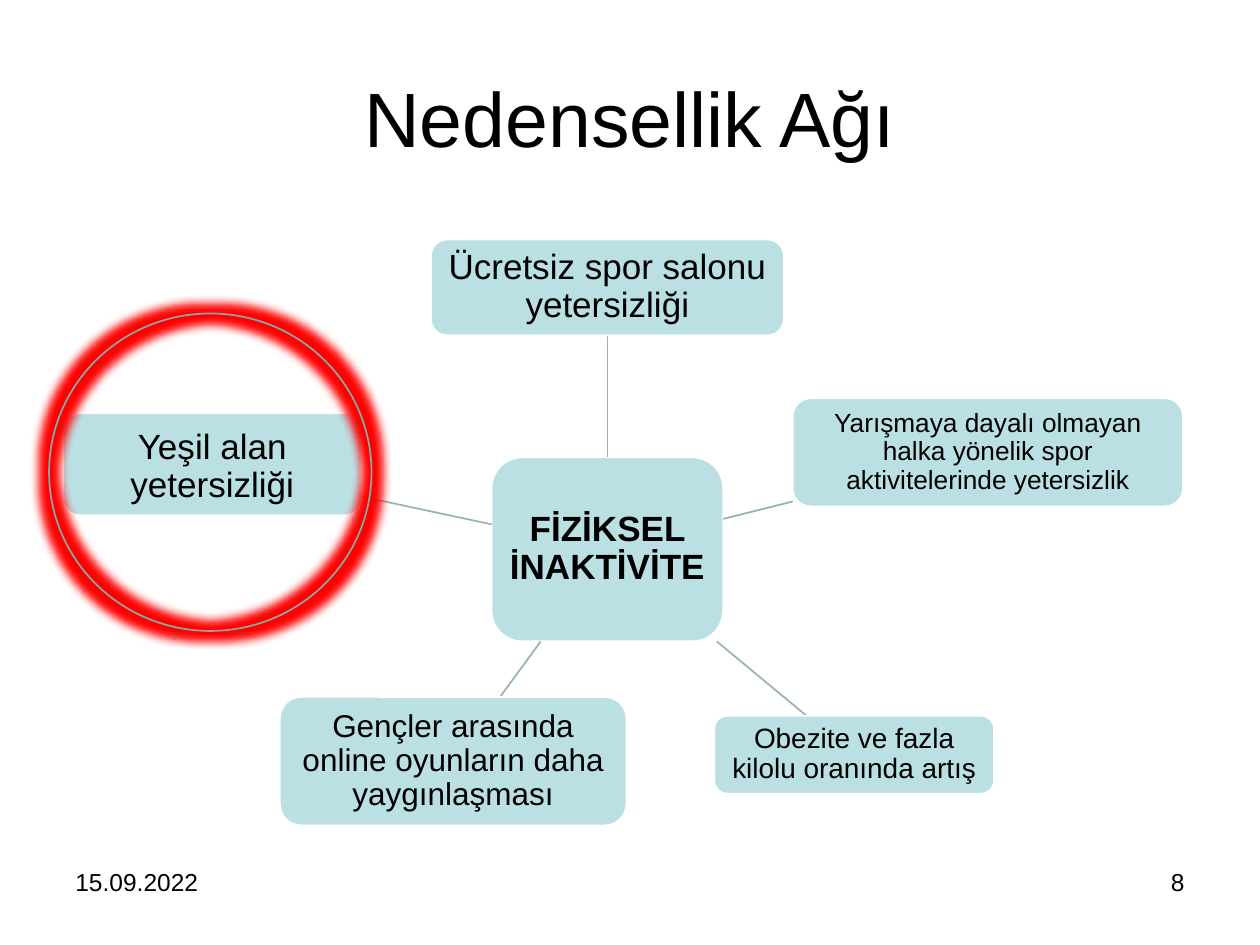
from collections import namedtuple

from lxml.etree import SubElement
from pptx import Presentation
from pptx.dml.color import RGBColor
from pptx.enum.shapes import MSO_CONNECTOR, MSO_SHAPE
from pptx.enum.text import MSO_ANCHOR, PP_ALIGN
from pptx.oxml.ns import qn
from pptx.util import Cm, Pt

BLACK = RGBColor(0x00, 0x00, 0x00)
WHITE = RGBColor(0xFF, 0xFF, 0xFF)
RED = RGBColor(0xFF, 0x00, 0x00)
NODE_FILL = RGBColor(0xBB, 0xE0, 0xE3)
SPOKE_LINE = RGBColor(0x96, 0xB3, 0xB6)
RING_LINE = RGBColor(0x8A, 0xA6, 0xA8)

# All lengths in centimetres
Box = namedtuple("Box", "left top width height")
Node = namedtuple("Node", "text box size inset spoke")

HUB = Box(9.91, 9.22, 4.67, 3.71)

# Causes around the hub; a spoke is (start, end) measured from the hub's corner,
# None where it joins the middles of two sides
CAUSES = [
    Node("Ücretsiz spor salonu yetersizliği", Box(8.69, 4.83, 7.11, 1.93), 20, 0.15, None),
    Node("Yarışmaya dayalı olmayan halka yönelik spor aktivitelerinde yetersizlik",
         Box(15.98, 8.03, 7.87, 2.18), 15, 0.1, ((4.67, 1.24), (6.07, 0.89))),
    Node("Obezite ve fazla kilolu oranında artış",
         Box(14.4, 14.43, 5.64, 1.57), 16, 0.1, ((4.54, 3.71), (6.35, 5.21))),
    Node("Gençler arasında online oyunların daha yaygınlaşması",
         Box(5.64, 14.05, 6.99, 2.59), 18, 0.13, ((0.99, 3.71), (0.17, 4.83))),
    Node("Yeşil alan yetersizliği", Box(1.27, 8.33, 6.02, 2.06), 20, 0.15,
         ((0, 1.35), (-2.62, 0.79))),
]


def write(shape, text, size, bold=False, align=PP_ALIGN.LEFT, anchor=MSO_ANCHOR.TOP,
          inset=None, line_spacing=None):
    frame = shape.text_frame
    frame.word_wrap = True
    frame.vertical_anchor = anchor
    if inset is not None:
        frame.margin_left = frame.margin_right = Cm(inset)
        frame.margin_top = frame.margin_bottom = Cm(inset)
    para = frame.paragraphs[0]
    para.alignment = align
    if line_spacing:
        para.line_spacing = line_spacing
    span = para.add_run()
    span.text = text
    span.font.name = "Arial"
    span.font.size = Pt(size)
    span.font.bold = bold
    span.font.color.rgb = BLACK


def add_label(page, box, text, size, **style):
    write(page.shapes.add_textbox(*map(Cm, box)), text, size, **style)


def add_node(page, box, text, size, inset, bold=False):
    node = page.shapes.add_shape(MSO_SHAPE.ROUNDED_RECTANGLE, *map(Cm, box))
    node.shadow.inherit = False
    node.fill.solid()
    node.fill.fore_color.rgb = NODE_FILL
    node.line.color.rgb = WHITE
    node.line.width = Pt(1)
    write(node, text, size, bold=bold, align=PP_ALIGN.CENTER,
          anchor=MSO_ANCHOR.MIDDLE, inset=inset, line_spacing=0.9)
    return node


def add_spoke(page, start, end):
    spoke = page.shapes.add_connector(MSO_CONNECTOR.STRAIGHT, *map(Cm, start + end))
    spoke.line.color.rgb = SPOKE_LINE
    spoke.line.width = Pt(1)
    SubElement(spoke._element.spPr, qn("a:effectLst"))
    return spoke


def add_causal_web(page, hub_box, causes):
    hub = add_node(page, hub_box, "FİZİKSEL İNAKTİVİTE", 20, 0.15, bold=True)
    for cause in causes:
        ends = cause.spoke or ((0, 0), (0, 0))
        start, end = [(hub_box.left + x, hub_box.top + y) for x, y in ends]
        spoke = add_spoke(page, start, end)
        node = add_node(page, cause.box, cause.text, cause.size, cause.inset)
        if cause.spoke is None:
            spoke.begin_connect(hub, 0)
            spoke.end_connect(node, 2)
    # The last cause sits slightly low in its box
    node.text_frame.margin_top = Cm(0.25)


def add_glowing_ring(page, box):
    ring = page.shapes.add_shape(MSO_SHAPE.OVAL, *map(Cm, box))
    ring.shadow.inherit = False
    ring.fill.background()
    ring.line.color.rgb = RING_LINE
    ring.line.width = Pt(1)
    effects = ring._element.spPr.find(qn("a:effectLst"))
    glow = SubElement(effects, qn("a:glow"), rad=str(Pt(11)))
    SubElement(glow, qn("a:srgbClr"), val=str(RED))


def add_footer(page, box, date, number):
    part_width = 5.92
    add_label(page, box._replace(width=part_width), date, 14)
    right = box.left + box.width - part_width
    add_label(page, box._replace(left=right, width=part_width), number, 14,
              align=PP_ALIGN.RIGHT)


def main():
    deck = Presentation()
    deck.slide_width, deck.slide_height = Cm(25.4), Cm(19.05)
    page = deck.slides.add_slide(deck.slide_layouts[6])
    # Title
    add_label(page, Box(1.27, 0.76, 22.86, 3.18), "Nedensellik Ağı", 44,
              align=PP_ALIGN.CENTER, anchor=MSO_ANCHOR.MIDDLE)
    # Hub with its causes
    add_causal_web(page, HUB, CAUSES)
    # Date and page number
    add_footer(page, Box(1.27, 17.35, 22.86, 1.32), "15.09.2022", "8")
    # Highlight around the green space cause
    add_glowing_ring(page, Box(0.99, 6.32, 6.5, 6.4))
    deck.save("out.pptx")


if __name__ == "__main__":
    main()
